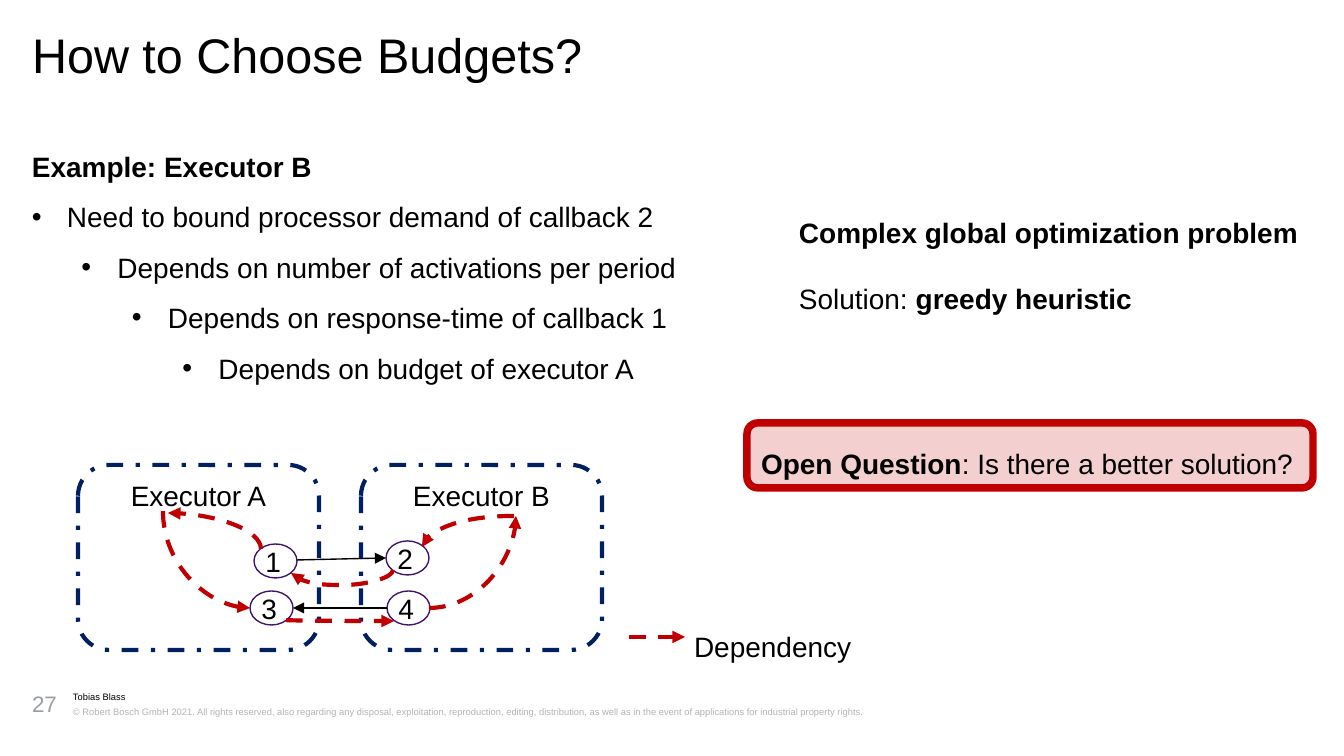
from lxml.etree import SubElement
from pptx import Presentation
from pptx.dml.color import RGBColor
from pptx.enum.dml import MSO_LINE
from pptx.enum.shapes import MSO_CONNECTOR, MSO_SHAPE
from pptx.enum.text import MSO_ANCHOR, PP_ALIGN
from pptx.oxml.ns import qn
from pptx.util import Pt

PX = 9144000 / 1344
COLORS = {"black": "000000", "navy": "002060", "purple": "3F136C",
          "red": "C00000", "gray": "999FA6", "light": "B2B3B5"}


def emu(px):
    return round(px * PX)


def color(name):
    return RGBColor.from_string(COLORS[name])


class SlideBuilder:
    """Holds the style and the current slide and draws each kind of element."""

    font = "Arial"
    size = 15

    def __init__(self, prs):
        self.s = prs.slides.add_slide(prs.slide_layouts[6])

    def stroke(self, line, name, width, dash=None):
        line.color.rgb = color(name)
        line.width = Pt(width)
        if dash:
            line.dash_style = dash

    def fill_text(self, sp, paragraphs, insets=(0, 0, 0, 0), anchor=MSO_ANCHOR.TOP,
                  size=None, ink="black", **form):
        tf = sp.text_frame
        sides = ("margin_left", "margin_top", "margin_right", "margin_bottom")
        frame = dict(zip(sides, map(emu, insets)))
        frame.update(word_wrap=True, vertical_anchor=anchor)
        for key, value in frame.items():
            setattr(tf, key, value)
        for i, runs in enumerate(paragraphs):
            p = tf.add_paragraph() if i else tf.paragraphs[0]
            values = {"alignment": PP_ALIGN.LEFT, **form}
            if not i:
                values.pop("space_before", None)
            for key, value in values.items():
                setattr(p, key, value)
            for text, bold in runs:
                r = p.add_run()
                r.text = text
                style = {"name": self.font, "size": Pt(size or self.size), "bold": bold}
                for key, value in style.items():
                    setattr(r.font, key, value)
                r.font.color.rgb = color(ink)
        return tf

    def text(self, box, paragraphs, **form):
        sp = self.s.shapes.add_textbox(*map(emu, box))
        return self.fill_text(sp, paragraphs, **form)

    def bullet(self, p, level):
        p.level = level
        pPr = p._p.get_or_add_pPr()
        pPr.set("marL", str(emu(35 + 50.5 * level)))
        pPr.set("indent", str(emu(-36 if level else -35)))
        SubElement(pPr, qn("a:buFont"), typeface=self.font)
        SubElement(pPr, qn("a:buChar"), char="•")

    def shape(self, kind, box, paragraphs, line, fill=None, **form):
        sp = self.s.shapes.add_shape(kind, *map(emu, box))
        sp.shadow.inherit = False
        if fill:
            sp.fill.solid()
            sp.fill.fore_color.rgb = color(fill)
            tint = sp._element.spPr.find(qn("a:solidFill")).find(qn("a:srgbClr"))
            SubElement(tint, qn("a:alpha"), val="19000")
        else:
            sp.fill.background()
        self.stroke(sp.line, *line)
        self.fill_text(sp, paragraphs, **form)

    def executor(self, left, name):
        self.shape(MSO_SHAPE.ROUNDED_RECTANGLE, (left, 465, 241, 185), [[(name, False)]],
                   ("navy", 2.25, MSO_LINE.DASH_DOT), insets=(11, 5, 11, 5),
                   alignment=PP_ALIGN.CENTER)

    def callback(self, left, top, number, align=PP_ALIGN.CENTER):
        self.shape(MSO_SHAPE.OVAL, (left, top, 43, 34), [[(number, False)]],
                   ("purple", 0.75), insets=(5, 5, 13, 5),
                   anchor=MSO_ANCHOR.MIDDLE, alignment=align)

    def arrow(self, start, end, kind=MSO_CONNECTOR.STRAIGHT, style=("black", 0.75)):
        c = self.s.shapes.add_connector(kind, *map(emu, (*start, *end)))
        self.stroke(c.line, *style)
        spPr = c._element.spPr
        SubElement(spPr.find(qn("a:ln")), qn("a:tailEnd"), type="triangle")
        SubElement(spPr, qn("a:effectLst"))
        return c

    def dependency(self, start, end, kind=MSO_CONNECTOR.STRAIGHT):
        return self.arrow(start, end, kind, ("red", 2.25, MSO_LINE.DASH))

    def curve(self, start, end, upright=False, bulge=None):
        (x1, y1), (x2, y2) = start, end
        dx, dy = x2 - x1, y2 - y1
        if upright:
            cx, cy = (x1 + x2) / 2, (y1 + y2) / 2
            start = (cx - dy / 2, cy + dx / 2)
            end = (cx + dy / 2, cy - dx / 2)
        c = self.dependency(start, end, MSO_CONNECTOR.CURVE)
        spPr = c._element.spPr
        if upright:
            spPr.find(qn("a:xfrm")).set("rot", "5400000")
        geom = spPr.find(qn("a:prstGeom"))
        if bulge is None:
            geom.set("prst", "curvedConnector2")
        else:
            SubElement(geom.find(qn("a:avLst")), qn("a:gd"), name="adj1",
                       fmla=f"val {round(bulge / dy * 100000)}")


def main():
    prs = Presentation()
    prs.slide_width, prs.slide_height = emu(1344), emu(756)
    b = SlideBuilder(prs)

    b.text((73, 691, 1121, 13), [[("Tobias Blass", False)]], size=5, line_spacing=1.07)
    b.text((73, 704, 1121, 27), [[(
        "© Robert Bosch GmbH 2021. All rights reserved, also regarding any disposal, "
        "exploitation, reproduction, editing, distribution, as well as in the event of "
        "applications for industrial property rights.", False)]],
        size=5, ink="light", line_spacing=1.2)
    b.text((32, 32, 1281, 47), [[("How to Choose Budgets?", False)]],
           size=26, line_spacing=0.89)
    b.text((32, 690, 35, 50), [[("27", False)]], size=12, ink="gray")
    b.text((788, 211, 524, 113), [
        [("Complex global optimization problem", True)],
        [("Solution: ", False), ("greedy heuristic", True)],
    ], insets=(11, 5, 11, 5), space_before=Pt(17))

    points = ["Need to bound processor demand of callback 2",
              "Depends on number of activations per period",
              "Depends on response-time of callback 1",
              "Depends on budget of executor A"]
    tf = b.text((32, 140, 714, 257),
                [[("Example: Executor B", True)]] + [[(point, False)] for point in points],
                line_spacing=1.28, space_before=Pt(4))
    for level, p in enumerate(tf.paragraphs[1:]):
        b.bullet(p, level)

    b.executor(361, "Executor B")
    b.callback(386, 541, "2")
    b.callback(387, 591, "4")
    b.executor(78, "Executor A")
    b.callback(250, 591, "3")
    b.callback(254, 544, "1", PP_ALIGN.LEFT)

    b.arrow((297, 560), (386, 558))
    b.arrow((387, 608), (293, 608))
    b.curve((429, 608), (516, 516))
    b.curve((514, 516), (422, 547))
    b.curve((393, 570), (291, 573), upright=True, bulge=15)
    b.curve((261, 549), (168, 513), upright=True)
    b.curve((163, 511), (250, 608), upright=True)
    b.curve((286, 620), (394, 621), upright=True)
    b.dependency((629, 637), (685, 637))
    b.text((694, 620, 159, 36), [[("Dependency", False)]], line_spacing=1.28)

    b.shape(MSO_SHAPE.ROUNDED_RECTANGLE, (747, 423, 566, 65),
            [[("Open Question", True), (": Is there a better solution?", False)]],
            ("red", 4), fill="red", insets=(11, 11, 11, 11), line_spacing=1.28)
    prs.save("out.pptx")


if __name__ == "__main__":
    main()
